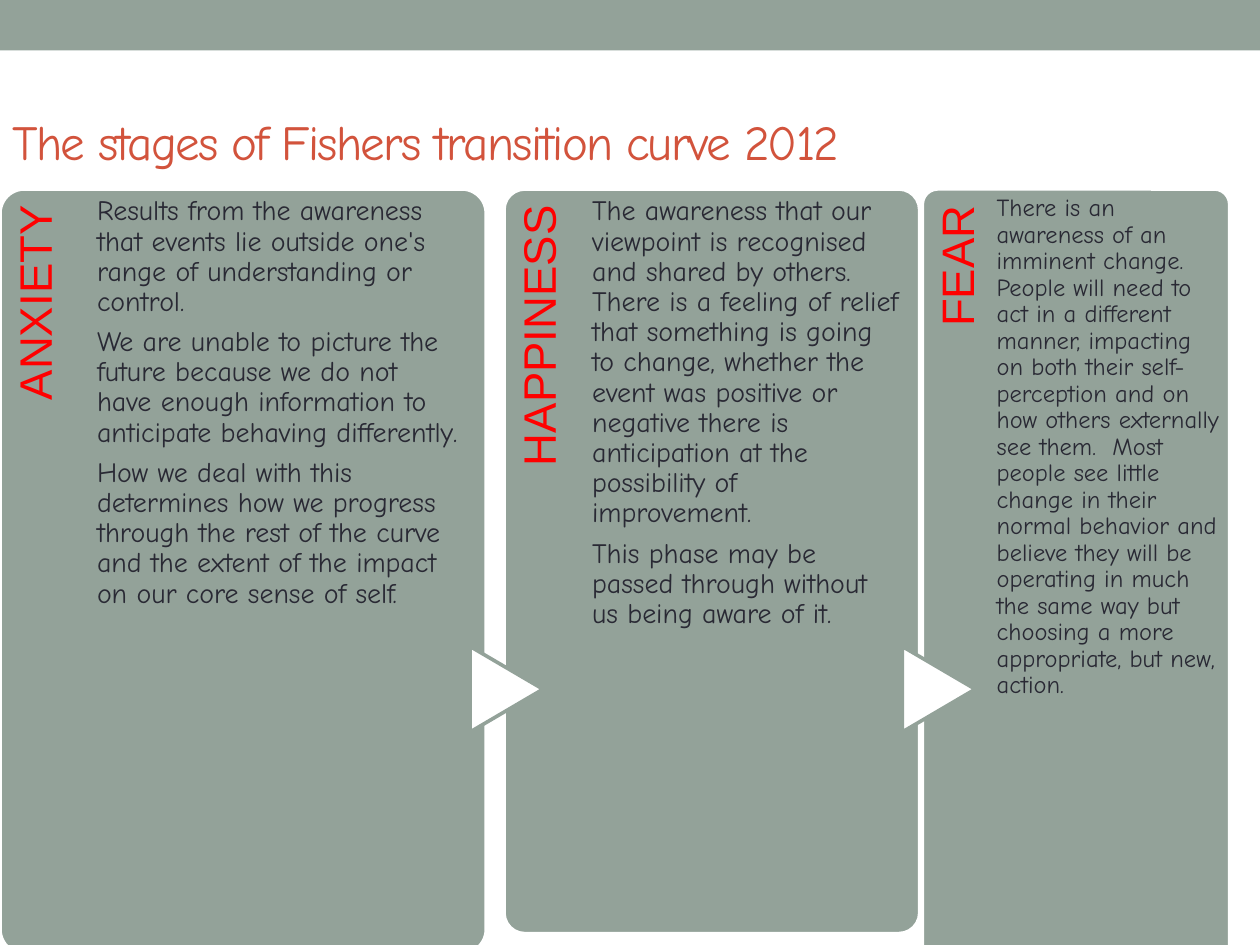
import pptx
import pptx.util
import pptx.dml.color
import pptx.enum.shapes
import pptx.enum.text
import lxml.etree
from dataclasses import dataclass

Inches = pptx.util.Inches
Pt = pptx.util.Pt
Shape = pptx.enum.shapes.MSO_SHAPE
Align = pptx.enum.text.PP_ALIGN
Anchor = pptx.enum.text.MSO_ANCHOR


@dataclass
class Theme:
    sage: str = "93A299"
    white: str = "FFFFFF"
    rust: str = "D2533C"
    red: str = "FF0000"
    ink: str = "292934"
    hand: str = "Comic Neue"
    plain: str = "Arial"
    title: int = 28
    label: int = 26
    edge: float = 2.08


def color(code):
    return pptx.dml.color.RGBColor.from_string(code)


def apply(target, values):
    for name, value in values.items():
        setattr(target, name, value)


class Maker:
    def __init__(self, slide, theme):
        self.slide = slide
        self.theme = theme

    def shape(self, kind, box, fill, line=None, turn=0):
        item = self.slide.shapes.add_shape(kind, *map(Inches, box))
        item.shadow.inherit = False
        item.rotation = turn
        item.fill.solid()
        item.fill.fore_color.rgb = color(fill)
        if line:
            item.line.color.rgb = color(line)
            item.line.width = Pt(self.theme.edge)
        else:
            item.line.fill.background()
        return item

    def text(self, box, paras, font, size, tint, inset, para=None,
             anchor=Anchor.TOP, turn=0):
        item = self.slide.shapes.add_textbox(*map(Inches, box))
        item.rotation = turn
        frame = item.text_frame
        sides = ("margin_left", "margin_top", "margin_right", "margin_bottom")
        apply(frame, {"word_wrap": True, "vertical_anchor": anchor,
                      **dict(zip(sides, map(Inches, inset)))})
        for i, words in enumerate(paras):
            block = frame.paragraphs[0] if i == 0 else frame.add_paragraph()
            apply(block, para or {})
            run = block.add_run()
            run.text = words
            apply(run.font, {"name": font, "size": Pt(size)})
            run.font.color.rgb = color(tint)
        return item

    def title(self, words):
        look = self.theme
        item = self.text((0, 0.58, 9, 1.08), [words], look.hand, look.title,
                         look.rust, (0.1, 0.05, 0.1, 0.05),
                         anchor=Anchor.MIDDLE)
        run = item.text_frame.paragraphs[0].runs[0]
        run.font._element.set("spc", "-100")

    def panel(self, left, wide, tall, label):
        look = self.theme
        card = self.shape(Shape.ROUNDED_RECTANGLE, (left, TOP, wide, tall),
                          look.sage, look.white)
        card.adjustments[0] = 0.05
        long, thick = 0.82 * tall, 0.2 * wide
        box = (left + (thick - long) / 2, TOP + (long - thick) / 2, long, thick)
        self.text(box, [label], look.plain, look.label, look.red,
                  (0, 0.1, 0.13, 0),
                  {"alignment": Align.RIGHT, "line_spacing": 0.9}, turn=270)

    def arrow(self, left):
        self.shape(Shape.FLOWCHART_EXTRACT, (left, 5.18, 0.68, 0.58),
                   self.theme.white, self.theme.sage, 90)

    def body(self, left, wide, tall, size, paras):
        look = self.theme
        self.text((left, TOP, wide, tall), paras, look.hand, size, look.ink,
                  (0, size / 260, 0, 0),
                  {"line_spacing": 0.9, "space_after": Pt(0.35 * size)})


TOP = 1.5
STAGES = [
    {"label": "ANXIETY", "card": (0, 3.86), "tall": 6.07, "arrow": None,
     "body": (0.77, 2.88), "size": 16, "paras": [
         "Results from the awareness that events lie outside one's range of "
         "understanding or control.",
         "We are unable to picture the future because we do not have enough "
         "information to anticipate behaving differently.",
         "How we deal with this determines how we progress through the rest "
         "of the curve and the extent of the impact on our core sense of "
         "self."]},
    {"label": "HAPPINESS", "card": (4, 3.3), "tall": 5.91, "arrow": 3.68,
     "body": (4.7, 2.46), "size": 16, "paras": [
         "The awareness that our viewpoint is recognised and shared by "
         "others. There is a feeling of relief that something is going to "
         "change, whether the event was positive or negative there is "
         "anticipation at the possibility of improvement.",
         "This phase may be passed through without us being aware of it."]},
    {"label": "FEAR", "card": (7.32, 2.44), "tall": 6.26, "arrow": 7.11,
     "body": (7.91, 1.82), "size": 14, "paras": [
         "There is an awareness of an imminent change. People will need to "
         "act in a different manner, impacting on both their self-perception "
         "and on how others externally see them.  Most people see little "
         "change in their normal behavior and believe they will be operating "
         "in much the same way but choosing a more appropriate, but new, "
         "action."]},
]


def main():
    deck = pptx.Presentation()
    apply(deck, {"slide_width": Inches(10), "slide_height": Inches(7.5)})
    theme = Theme()
    maker = Maker(deck.slides.add_slide(deck.slide_layouts[6]), theme)
    maker.shape(Shape.RECTANGLE, (0, 0, 10, 0.4), theme.sage)
    maker.title("The stages of Fishers transition curve 2012")
    for stage in STAGES:
        maker.panel(*stage["card"], stage["tall"], stage["label"])
        if stage["arrow"]:
            maker.arrow(stage["arrow"])
        maker.body(*stage["body"], stage["tall"], stage["size"],
                   stage["paras"])
    deck.save("out.pptx")


if __name__ == "__main__":
    main()
